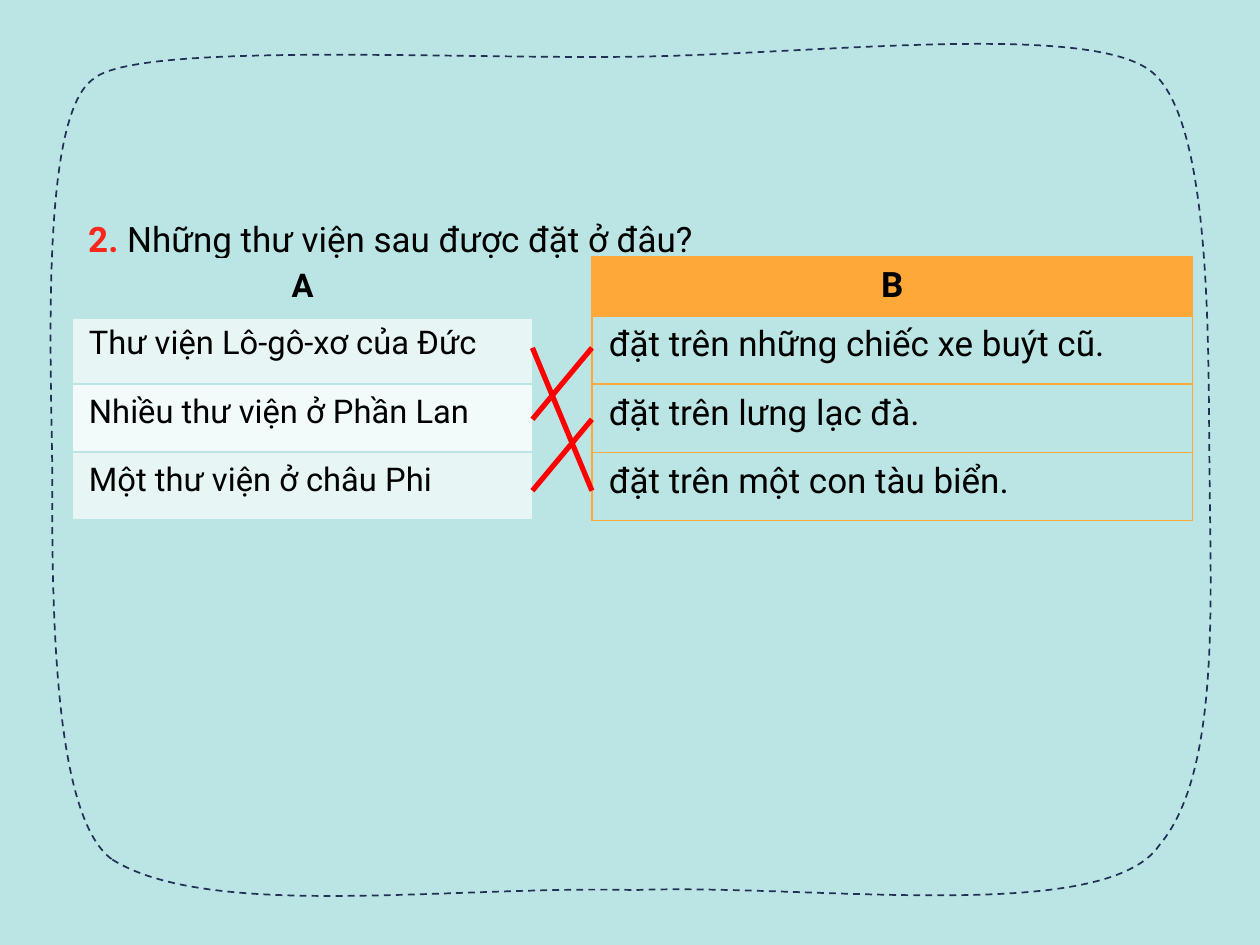
from lxml import etree
from pptx import Presentation, util as u
from pptx.dml.color import RGBColor
from pptx.enum import dml, shapes, text
from pptx.oxml import ns

AQUA = RGBColor(0xBA, 0xE5, 0xE4)
MIST = RGBColor(0xE7, 0xF5, 0xF5)
PALE = RGBColor(0xF3, 0xFA, 0xFA)
ORANGE = RGBColor(0xFE, 0xA8, 0x3A)
NAVY = RGBColor(0x21, 0x30, 0x54)
SCARLET = RGBColor(0xFA, 0x26, 0x1C)
RED = RGBColor(0xFF, 0x00, 0x00)
BLACK = RGBColor(0x00, 0x00, 0x00)

FRAME_BOX = (0.76, 0.66, 17.55, 12.88)
FRAME_START = (1.7, 13)
FRAME_CURVES = [  # two control points and an end point each, in cm
    ((3.18, 13.92), (6.83, 13.39), (9.6, 13.46)),
    ((12.22, 13.36), (16.71, 14), (17.53, 12.78)),
    ((18.42, 11.73), (18.31, 9.27), (18.29, 7.32)),
    ((18.26, 5.36), (18.36, 1.7), (17.35, 1.04)),
    ((16.28, 0.33), (12.09, 0.84), (9.45, 0.86)),
    ((6.78, 0.89), (2.06, 0.64), (1.42, 1.19)),
    ((0.64, 1.7), (0.76, 5.11), (0.79, 6.99)),
    ((0.79, 8.84), (0.76, 12.34), FRAME_START),
]
LIBRARIES = ["Thư viện Lô-gô-xơ của Đức", "Nhiều thư viện ở Phần Lan",
             "Một thư viện ở châu Phi"]
PLACES = ["đặt trên những chiếc xe buýt cũ.", "đặt trên lưng lạc đà.",
          "đặt trên một con tàu biển."]
ANSWERS = [(0, 2), (1, 0), (2, 1)]  # library row, place row
LEFT_EDGE, RIGHT_EDGE = 8.05, 8.95
FIRST_ROW_Y, ROW_STEP = 5.26, 1.08


class Lesson:
    """Holds the text style and the current slide."""

    font = "Roboto"

    def __init__(self, prs):
        self.s = prs.slides.add_slide(prs.slide_layouts[5])
        self.s.background.fill.solid()
        self.s.background.fill.fore_color.rgb = AQUA

    def run(self, p, words, size, bold=False, color=BLACK):
        r = p.add_run()
        r.text = words
        r.font.name, r.font.size = self.font, u.Pt(size)
        r.font.bold, r.font.color.rgb = bold, color

    def frame(self, box, start, curves):
        """Draw a closed dashed outline of cubic curves that fills box."""
        left, top, width, height = map(u.Cm, box)
        builder = self.s.shapes.build_freeform(*map(u.Cm, start))
        builder.add_line_segments(
            [tuple(map(u.Cm, curve[-1])) for curve in curves])
        sp = builder.convert_to_shape()
        sp.left, sp.top, sp.width, sp.height = left, top, width, height
        path = sp._element.find(".//" + ns.qn("a:path"))
        path.set("w", str(int(width)))
        path.set("h", str(int(height)))
        for child in list(path):
            path.remove(child)
        steps = [("moveTo", [start])]
        steps += [("cubicBezTo", curve) for curve in curves]
        for tag, points in steps + [("close", [])]:
            step = etree.SubElement(path, ns.qn("a:" + tag))
            for x, y in points:
                etree.SubElement(step, ns.qn("a:pt"),
                                 x=str(u.Cm(x) - left), y=str(u.Cm(y) - top))
        sp.shadow.inherit = False
        sp.fill.background()
        sp.line.color.rgb, sp.line.width = NAVY, u.Pt(0.75)
        sp.line.dash_style = dml.MSO_LINE.DASH

    def title(self, number, question):
        sp = self.s.shapes.title
        sp.left, sp.top = u.Cm(1.08), u.Cm(2.52)
        sp.width, sp.height = u.Cm(16.99), u.Cm(1.32)
        tf = sp.text_frame
        tf.word_wrap, tf.auto_size = True, text.MSO_AUTO_SIZE.NONE
        tf.vertical_anchor = text.MSO_ANCHOR.TOP
        p = tf.paragraphs[0]
        p.alignment, p.line_spacing = text.PP_ALIGN.JUSTIFY, 2.0
        self.run(p, number, 15, True, SCARLET)
        self.run(p, question, 15)

    def borders(self, cell, color, width, bottom):
        """Draw the four cell edges; bottom is the width of the lower one."""
        tc_pr = cell._tc.get_or_add_tcPr()
        edges = {"lnL": width, "lnR": width, "lnT": width, "lnB": bottom}
        for i, (tag, points) in enumerate(edges.items()):
            ln = etree.Element(ns.qn("a:" + tag), w=str(int(u.Pt(points))))
            fill = etree.SubElement(ln, ns.qn("a:solidFill"))
            etree.SubElement(fill, ns.qn("a:srgbClr"), val=str(color))
            tc_pr.insert(i, ln)

    def column(self, words, box, heights, size, fills, border, bottom):
        """Add a one-column table; border is (color, width)."""
        table = self.s.shapes.add_table(
            len(words), 1, *map(u.Cm, box)).table
        table.first_row = table.horz_banding = False
        for i, (line, fill) in enumerate(zip(words, fills)):
            header = i == 0
            table.rows[i].height = u.Cm(heights[0 if header else 1])
            cell = table.cell(i, 0)
            if fill is None:
                cell.fill.background()
            else:
                cell.fill.solid()
                cell.fill.fore_color.rgb = fill
            self.borders(cell, *border, bottom if header else border[1])
            p = cell.text_frame.paragraphs[0]
            if header:
                p.alignment = text.PP_ALIGN.CENTER
            self.run(p, line, size, header)

    def link(self, library, place):
        y1, y2 = (u.Cm(FIRST_ROW_Y + ROW_STEP * i) for i in (library, place))
        c = self.s.shapes.add_connector(
            shapes.MSO_CONNECTOR.STRAIGHT,
            u.Cm(LEFT_EDGE), y1, u.Cm(RIGHT_EDGE), y2)
        c.line.color.rgb, c.line.width = RED, u.Pt(2.25)
        etree.SubElement(c._element.spPr, ns.qn("a:effectLst"))


def main():
    prs = Presentation()
    prs.slide_width, prs.slide_height = u.Cm(19.05), u.Cm(14.29)
    lesson = Lesson(prs)
    lesson.frame(FRAME_BOX, FRAME_START, FRAME_CURVES)
    lesson.title("2. ", "Những thư viện sau được đặt ở đâu?")
    lesson.column(["A"] + LIBRARIES, (1.09, 3.91, 6.97, 3.96), (0.87, 1.03),
                  14, [AQUA, MIST, PALE, MIST], (AQUA, 1), 3)
    lesson.column(["B"] + PLACES, (RIGHT_EDGE, 3.88, 9.08, 3.99), (0.9, 1.03),
                  15, [ORANGE, None, None, None], (ORANGE, 0.75), 0.75)
    for library, place in ANSWERS:
        lesson.link(library, place)
    prs.save("out.pptx")


if __name__ == "__main__":
    main()
